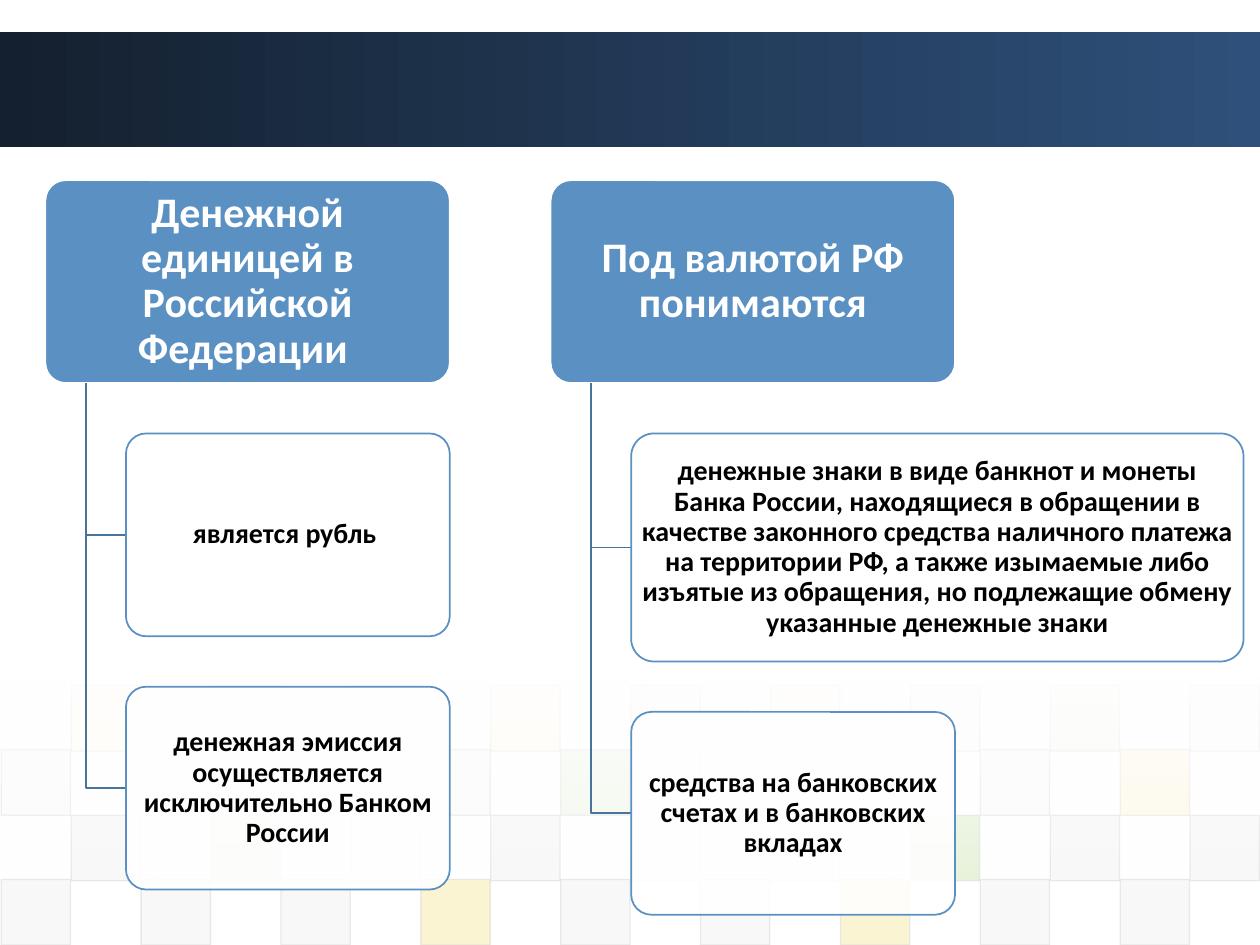
from dataclasses import dataclass

from lxml import etree
from pptx import Presentation
from pptx import util as u
from pptx.dml.color import RGBColor
from pptx.enum import shapes, text
from pptx.oxml.ns import qn


@dataclass(frozen=True)
class Theme:
    """Colours, font and type sizes of the slide."""
    font: str = "Calibri"
    head_size: int = 24
    child_size: int = 16
    band_start: str = "14202F"
    band_end: str = "2E507A"
    blue: str = "5A90C2"
    branch: str = "48739B"
    white: str = "FFFFFF"
    black: str = "000000"
    grey: str = "DDDDDD"
    pale: str = "EAEAEA"
    green: str = "8AC246"
    yellow: str = "EFC821"


THEME = Theme()
TILE_COLORS = {"D": THEME.grey, "E": THEME.pale, "G": THEME.green, "Y": THEME.yellow}
TILE_ROWS = [
    (5.44, 1, 5, "YEEYDYEGE"),
    (5.95, 0, 10, "DDDDGDDDY"),
    (6.47, 1, 20, "DGDDDDGDD"),
    (6.98, 0, 20, "DDDYDDYDD"),
]
TREES = [
    (0.36, "Денежной единицей в Российской Федерации ", [
        (2.57, 1.61, "является рубль "),
        (2.57, 1.61, "денежная эмиссия осуществляется исключительно Банком России"),
    ]),
    (4.37, "Под валютой РФ понимаются", [
        (4.86, 1.81, "денежные знаки в виде банкнот и монеты Банка России, "
                     "находящиеся в обращении в качестве законного средства "
                     "наличного платежа на территории РФ, а также изымаемые либо "
                     "изъятые из обращения, но подлежащие обмену указанные "
                     "денежные знаки"),
        (2.57, 1.61, "средства на банковских счетах и в банковских вкладах"),
    ]),
]
HEAD_TOP, HEAD_WIDTH, HEAD_HEIGHT = 1.43, 3.21, 1.61
TRUNK_OFFSET, CHILD_OFFSET, GAP = 0.32, 0.64, 0.4


def rgb(value):
    """Turn a hex string into a colour."""
    return RGBColor.from_string(value)


def set_opacity(shape, *percents):
    """Set the opacity of the shape's colours in order, fill before line."""
    colors = list(shape._element.spPr.iter(qn("a:srgbClr")))
    for color, percent in zip(colors, percents):
        etree.SubElement(color, qn("a:alpha")).set("val", str(percent * 1000))


def set_line(shape, color, width):
    """Give a shape a solid outline."""
    shape.line.color.rgb = rgb(color)
    shape.line.width = u.Pt(width)


def add_box(page, kind, left, top, width, height):
    """Add a preset shape without a shadow."""
    box = page.shapes.add_shape(kind, *map(u.Inches, (left, top, width, height)))
    box.shadow.inherit = False
    return box


def add_gradient(page, top, height, start, end, angle):
    """Add a full-width rectangle with a two-colour gradient."""
    band = add_box(page, shapes.MSO_SHAPE.RECTANGLE, 0, top, 10, height)
    band.fill.gradient()
    band.fill.gradient_angle = angle
    for stop, color, position in zip(band.fill.gradient_stops, (start, end), (0, 1)):
        stop.color.rgb = rgb(color)
        stop.position = position
    band.line.fill.background()
    return band


def add_tiles(page):
    """Add the faint checkerboard along the bottom."""
    for top, first, opacity, codes in TILE_ROWS:
        for index, code in enumerate(codes):
            left = 0.01 + 0.555 * (first + 2 * index)
            tile = add_box(page, shapes.MSO_SHAPE.RECTANGLE, left, top, 0.55, 0.52)
            tile.fill.solid()
            tile.fill.fore_color.rgb = rgb(TILE_COLORS[code])
            set_line(tile, THEME.grey, 0.75)
            set_opacity(tile, opacity, 60)


def add_node(page, frame, words, fill, line, ink, size, insets):
    """Add a rounded box with centred bold text."""
    box = add_box(page, shapes.MSO_SHAPE.ROUNDED_RECTANGLE, *frame)
    box.adjustments[0] = 0.1
    box.fill.solid()
    box.fill.fore_color.rgb = rgb(fill)
    set_line(box, line, 1)
    body = box.text_frame
    body.word_wrap = True
    body.vertical_anchor = text.MSO_ANCHOR.MIDDLE
    body.margin_left = body.margin_right = u.Inches(insets[0])
    body.margin_top = body.margin_bottom = u.Inches(insets[1])
    para = body.paragraphs[0]
    para.text = words
    para.alignment = text.PP_ALIGN.CENTER
    para.line_spacing = 0.9
    para.font.name = THEME.font
    para.font.size = u.Pt(size)
    para.font.bold = True
    para.font.color.rgb = rgb(ink)
    return box


def add_branch(page, left, top, right, bottom):
    """Add an open right-angled line going down and then right."""
    builder = page.shapes.build_freeform(u.Inches(left), u.Inches(top))
    corners = [(left, bottom), (right, bottom)]
    builder.add_line_segments(
        [(u.Inches(x), u.Inches(y)) for x, y in corners], close=False)
    branch = builder.convert_to_shape()
    branch.shadow.inherit = False
    branch.fill.background()
    set_line(branch, THEME.branch, 1)


def add_tree(page, left, heading, children):
    """Add a heading box with its children stacked beneath it."""
    add_node(page, (left, HEAD_TOP, HEAD_WIDTH, HEAD_HEIGHT), heading,
             THEME.blue, THEME.white, THEME.white, THEME.head_size, (0.05, 0.03))
    head_bottom = HEAD_TOP + HEAD_HEIGHT
    child_left = left + CHILD_OFFSET
    top = head_bottom + GAP
    for width, height, words in children:
        add_branch(page, left + TRUNK_OFFSET, head_bottom, child_left, top + height / 2)
        child = add_node(page, (child_left, top, width, height), words,
                         THEME.white, THEME.blue, THEME.black, THEME.child_size,
                         (0.03, 0.02))
        set_opacity(child, 90)
        top += height + GAP


def main():
    """Build the slide and save it."""
    deck = Presentation()
    deck.slide_width, deck.slide_height = u.Inches(10), u.Inches(7.5)
    page = deck.slides.add_slide(deck.slide_layouts[6])
    add_gradient(page, 0.25, 0.92, THEME.band_start, THEME.band_end, 0)
    add_tiles(page)
    veil = add_gradient(page, 5.37, 1.62, THEME.white, THEME.white, 270)
    set_opacity(veil, 90, 0)
    for left, heading, children in TREES:
        add_tree(page, left, heading, children)
    deck.save("out.pptx")


if __name__ == "__main__":
    main()
